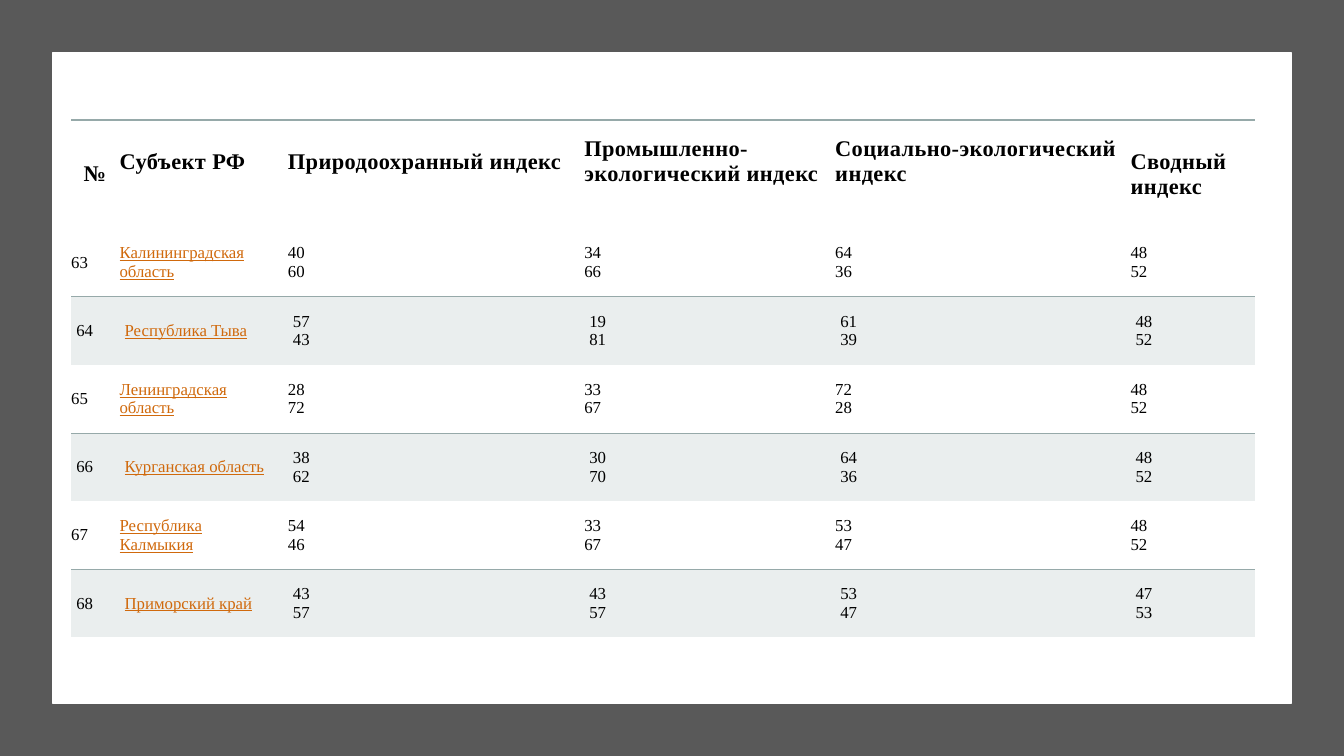
import pptx
import pptx.dml.color
import pptx.enum.shapes
import pptx.enum.text
import pptx.oxml.ns
import pptx.util
from lxml import etree

RGBColor = pptx.dml.color.RGBColor
FRAME_GRAY = RGBColor(0x59, 0x59, 0x59)
WHITE = RGBColor(0xFF, 0xFF, 0xFF)
BLACK = RGBColor(0x00, 0x00, 0x00)
LINK_ORANGE = RGBColor(0xD0, 0x69, 0x0C)
RULE_GREEN = RGBColor(0x96, 0xA9, 0xA9)
BAND_GRAY = RGBColor(0xEA, 0xEE, 0xEE)

PAD = 0.12  # cell padding, inches
RAISED_PAD = 0.37  # bottom padding that lifts a heading by half a line

# Heading and bottom padding of each column, with relative widths
HEADINGS = [
    ("№", PAD),
    ("Субъект РФ", RAISED_PAD),
    ("Природоохранный индекс", RAISED_PAD),
    ("Промышленно-экологический индекс", RAISED_PAD),
    ("Социально-экологический индекс", RAISED_PAD),
    ("Сводный индекс", PAD),
]
COLUMN_WEIGHTS = [0.48, 1.67, 2.94, 2.49, 2.93, 1.23]

# Number, region, and the two values of each index
REGIONS = [
    (63, "Калининградская область", (40, 60), (34, 66), (64, 36), (48, 52)),
    (64, "Республика Тыва", (57, 43), (19, 81), (61, 39), (48, 52)),
    (65, "Ленинградская область", (28, 72), (33, 67), (72, 28), (48, 52)),
    (66, "Курганская область", (38, 62), (30, 70), (64, 36), (48, 52)),
    (67, "Республика Калмыкия", (54, 46), (33, 67), (53, 47), (48, 52)),
    (68, "Приморский край", (43, 57), (43, 57), (53, 47), (47, 53)),
]


def write_text(text_frame, text, size=12, color=BLACK, bold=False,
               underline=False, centered=False, spacing=0):
    """Write one paragraph per line of text; spacing is in points."""
    alignments = pptx.enum.text.PP_ALIGN
    for index, line in enumerate(text.split("\n")):
        paragraph = text_frame.add_paragraph() if index else text_frame.paragraphs[0]
        paragraph.alignment = alignments.CENTER if centered else alignments.LEFT
        run = paragraph.add_run()
        run.text = line
        run.font.name = "Times New Roman"
        run.font.size = pptx.util.Pt(size)
        run.font.bold = bold
        run.font.underline = underline
        run.font.color.rgb = color
        if spacing:
            run.font._element.set("spc", str(round(spacing * 100)))


def set_borders(cell, top=0, bottom=0):
    """Draw the top and bottom borders in points; leave the sides empty."""
    properties = cell._tc.get_or_add_tcPr()
    qn = pptx.oxml.ns.qn
    for side, width in (("L", 0), ("R", 0), ("T", top), ("B", bottom)):
        line = etree.SubElement(properties, qn(f"a:ln{side}"), w=str(pptx.util.Pt(width)))
        if width:
            fill = etree.SubElement(line, qn("a:solidFill"))
            etree.SubElement(fill, qn("a:srgbClr"), val=str(RULE_GREEN))
        else:
            etree.SubElement(line, qn("a:noFill"))


class SlideBuilder:
    """Places elements by percent of the slide's width and height."""

    def __init__(self, presentation):
        self.presentation = presentation
        self.slide = presentation.slides.add_slide(presentation.slide_layouts[6])

    def across(self, percent):
        return round(self.presentation.slide_width * percent / 100)

    def down(self, percent):
        return round(self.presentation.slide_height * percent / 100)

    def rectangle(self, left, top, width, height, fill, line=None):
        shape = self.slide.shapes.add_shape(
            pptx.enum.shapes.MSO_SHAPE.RECTANGLE,
            self.across(left), self.down(top), self.across(width), self.down(height))
        shape.shadow.inherit = False
        shape.fill.solid()
        shape.fill.fore_color.rgb = fill
        if line is None:
            shape.line.fill.background()
        else:
            shape.line.color.rgb = line
            shape.line.width = pptx.util.Pt(1)

    def table(self, left, top, width, weights, row_heights):
        table = self.slide.shapes.add_table(
            len(row_heights), len(weights), self.across(left), self.down(top),
            self.across(width), self.down(sum(row_heights))).table
        table.first_row = table.horz_banding = False
        for column, weight in zip(table.columns, weights):
            column.width = self.across(width * weight / sum(weights))
        for row, height in zip(table.rows, row_heights):
            row.height = self.down(height)
        return table

    def cell(self, cell, text, left=0, right=PAD, bottom=PAD, fill=None,
             top_rule=0, bottom_rule=0, **text_format):
        cell.vertical_anchor = pptx.enum.text.MSO_ANCHOR.MIDDLE
        cell.margin_left = pptx.util.Inches(left)
        cell.margin_right = pptx.util.Inches(right)
        cell.margin_top = pptx.util.Inches(PAD)
        cell.margin_bottom = pptx.util.Inches(bottom)
        set_borders(cell, top_rule, bottom_rule)
        if fill is None:
            cell.fill.background()
        else:
            cell.fill.solid()
            cell.fill.fore_color.rgb = fill
        write_text(cell.text_frame, text, **text_format)


def main():
    presentation = pptx.Presentation()
    presentation.slide_width = pptx.util.Inches(13.333)
    presentation.slide_height = pptx.util.Inches(7.5)
    builder = SlideBuilder(presentation)

    # Gray frame and white sheet
    builder.rectangle(0, 0, 100, 100, FRAME_GRAY)
    builder.rectangle(3.9, 7, 92.2, 86, WHITE, line=WHITE)

    # Table headings
    table = builder.table(5.3, 15.87, 88.05, COLUMN_WEIGHTS,
                          [14.35] + [9.02] * len(REGIONS))
    for column, (heading, bottom) in enumerate(HEADINGS):
        builder.cell(table.cell(0, column), heading, right=0.01, bottom=bottom,
                     top_rule=1.5, size=16, bold=True, spacing=0.3,
                     centered=column == 0)

    # Region rows: every second one is shaded and ruled above
    for row, (number, region, *indices) in enumerate(REGIONS, start=1):
        if row % 2 == 0:
            row_style = dict(left=0.05, fill=BAND_GRAY, top_rule=0.75)
        else:
            row_style = dict(bottom_rule=0.75)
        builder.cell(table.cell(row, 0), str(number), **row_style)
        builder.cell(table.cell(row, 1), region, color=LINK_ORANGE,
                     underline=True, **row_style)
        for column, (first, second) in enumerate(indices, start=2):
            builder.cell(table.cell(row, column), f"{first}\n{second}", **row_style)

    presentation.save("out.pptx")


if __name__ == "__main__":
    main()
